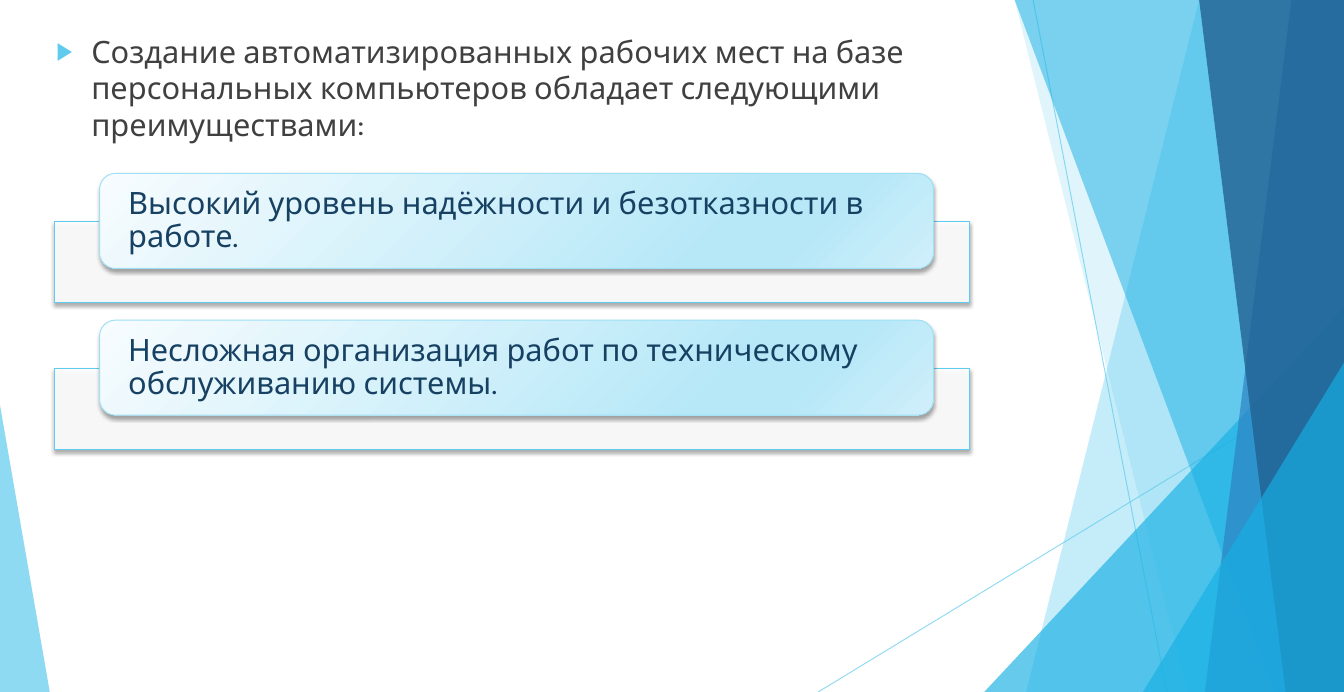
from lxml import etree
from pptx import Presentation, util as u
from pptx.dml.color import RGBColor
from pptx.enum import shapes as kinds, text as txt
from pptx.oxml.ns import qn

WIDTH, HEIGHT = 14.57, 7.5
FONT = "Karla"
COLORS = {
    "sky": "5FCBEF", "cyan": "17B0E4", "blue": "2E83C3", "navy": "226292",
    "ink": "174162", "body": "404040", "white": "FFFFFF", "black": "000000",
    "edge": "9FE0F5",
}
CARD_STOPS = [(0, "F7FCFE"), (74, "B7E8F8"), (83, "B7E8F8"), (100, "CFEFFA")]
INTRO = ("Создание автоматизированных рабочих мест на базе персональных "
         "компьютеров обладает следующими преимуществами:")
ADVANTAGES = [
    "Высокий уровень надёжности и безотказности в работе.",
    "Несложная организация работ по техническому обслуживанию системы.",
]
# Grid of the list of advantages
FIRST_TOP, ROW_STEP = 1.88, 1.59
CARD_LEFT, CARD_WIDTH, CARD_HEIGHT = 1.08, 9.04, 1.03
BAR_LEFT, BAR_WIDTH, BAR_HEIGHT, BAR_DROP = 0.59, 9.92, 0.88, 0.52


def rgb(name):
    return RGBColor.from_string(COLORS[name])


def add_xml(parent, tag, **attributes):
    return etree.SubElement(parent, qn(tag), {k: str(v) for k, v in attributes.items()})


def set_alpha(color_format_parent, percent):
    for color in color_format_parent.iter(qn("a:srgbClr")):
        add_xml(color, "a:alpha", val=percent * 1000)


def fill_solid(shape, color, alpha):
    shape.shadow.inherit = False
    shape.line.fill.background()
    shape.fill.solid()
    shape.fill.fore_color.rgb = rgb(color)
    set_alpha(shape._element.spPr, alpha)


def fill_gradient(shape, stops, angle):
    shape.fill.gradient()
    gradient = shape._element.spPr.find(qn("a:gradFill"))
    for child in list(gradient):
        gradient.remove(child)
    stop_list = add_xml(gradient, "a:gsLst")
    for position, color in stops:
        stop = add_xml(stop_list, "a:gs", pos=position * 1000)
        add_xml(stop, "a:srgbClr", val=color)
    add_xml(gradient, "a:lin", ang=angle * 60000, scaled=0)


def outline(shape, color, width):
    shape.line.color.rgb = rgb(color)
    shape.line.width = u.Pt(width)


def drop_shadow(shape):
    shape.shadow.inherit = False
    effects = shape._element.spPr.find(qn("a:effectLst"))
    shadow = add_xml(effects, "a:outerShdw", blurRad=u.Pt(3), dist=u.Pt(2),
                     dir=90 * 60000, rotWithShape=0)
    add_xml(shadow, "a:srgbClr", val=COLORS["black"])
    set_alpha(shadow, 35)


def add_box(slide, kind, left, top, width, height):
    return slide.shapes.add_shape(kind, *map(u.Inches, (left, top, width, height)))


def add_ray(slide, start, end):
    ray = slide.shapes.add_connector(kinds.MSO_CONNECTOR.STRAIGHT,
                                     *map(u.Inches, (*start, *end)))
    outline(ray, "sky", 0.75)
    set_alpha(ray._element.spPr, 70)
    add_xml(ray._element.spPr, "a:effectLst")


def add_band(slide, top_x, bottom_x, color, alpha):
    """Band from a slanted left edge to the slide's right side."""
    builder = slide.shapes.build_freeform(top_x, 0, scale=u.Inches(1))
    builder.add_line_segments([(WIDTH, 0), (WIDTH, HEIGHT), (bottom_x, HEIGHT)])
    fill_solid(builder.convert_to_shape(), color, alpha)


def add_corner(slide, left, top, width, apex, color, alpha):
    """Triangle that stands on the slide's bottom edge."""
    corner = add_box(slide, kinds.MSO_SHAPE.ISOSCELES_TRIANGLE,
                     left, top, width, HEIGHT - top)
    corner.adjustments[0] = apex
    fill_solid(corner, color, alpha)


def write(frame, content, *, color, size=24, spacing=1.0, before=0, after=0):
    frame.word_wrap = True
    frame.auto_size = txt.MSO_AUTO_SIZE.NONE
    paragraph = frame.paragraphs[0]
    paragraph.alignment = txt.PP_ALIGN.LEFT
    paragraph.line_spacing = spacing
    paragraph.space_before, paragraph.space_after = u.Pt(before), u.Pt(after)
    run = paragraph.add_run()
    run.text = content
    run.font.name, run.font.size = FONT, u.Pt(size)
    run.font.color.rgb = rgb(color)
    return paragraph


def add_bullet(paragraph, indent):
    props = paragraph._p.get_or_add_pPr()
    props.set("marL", str(u.Inches(indent)))
    props.set("indent", str(-u.Inches(indent)))
    add_xml(add_xml(props, "a:buClr"), "a:srgbClr", val=COLORS["sky"])
    add_xml(props, "a:buSzPct", val=80000)
    add_xml(props, "a:buFont", typeface="Arial")
    add_xml(props, "a:buChar", char="▶")


def add_backdrop(slide):
    add_ray(slide, (11.2, 0), (12.65, HEIGHT))
    add_ray(slide, (WIDTH, 4.03), (8.87, HEIGHT))
    add_band(slide, 13.41, 10.97, "sky", 36)
    add_band(slide, 11.47, 12.92, "sky", 20)
    add_corner(slide, 10.67, 3.33, WIDTH - 10.67, 1, "cyan", 66)
    add_band(slide, 11.15, 14.11, "cyan", 50)
    add_band(slide, 14.24, 13.02, "blue", 70)
    add_band(slide, 13.07, 14.4, "navy", 80)
    add_corner(slide, 12.39, 3.93, WIDTH - 12.39, 1, "cyan", 66)
    add_corner(slide, 0, 4.39, 0.54, 0, "sky", 70)


def add_intro(slide):
    intro = slide.placeholders[1]
    intro.left, intro.top = u.Inches(0.51), u.Inches(0.3)
    intro.width, intro.height = u.Inches(10.67), u.Inches(1.64)
    add_bullet(write(intro.text_frame, INTRO, color="body", before=10), 0.38)


def add_advantage(slide, row, content):
    top = FIRST_TOP + row * ROW_STEP
    bar = add_box(slide, kinds.MSO_SHAPE.RECTANGLE,
                  BAR_LEFT, top + BAR_DROP, BAR_WIDTH, BAR_HEIGHT)
    fill_solid(bar, "white", 90)
    outline(bar, "sky", 1)
    drop_shadow(bar)

    card = add_box(slide, kinds.MSO_SHAPE.ROUNDED_RECTANGLE,
                   CARD_LEFT, top, CARD_WIDTH, CARD_HEIGHT)
    fill_gradient(card, CARD_STOPS, 45)
    outline(card, "edge", 0.75)
    drop_shadow(card)
    frame = card.text_frame
    frame.margin_left = frame.margin_right = u.Inches(0.26)
    frame.margin_top = frame.margin_bottom = 0
    frame.vertical_anchor = txt.MSO_ANCHOR.MIDDLE
    write(frame, content, color="ink", spacing=0.9, after=8.4)


def main():
    deck = Presentation()
    deck.slide_width, deck.slide_height = u.Inches(WIDTH), u.Inches(HEIGHT)
    slide = deck.slides.add_slide(deck.slide_layouts[1])
    # The slide has body text but no title
    title = slide.shapes.title._element
    title.getparent().remove(title)
    add_backdrop(slide)
    add_intro(slide)
    for row, content in enumerate(ADVANTAGES):
        add_advantage(slide, row, content)
    deck.save("out.pptx")


if __name__ == "__main__":
    main()
